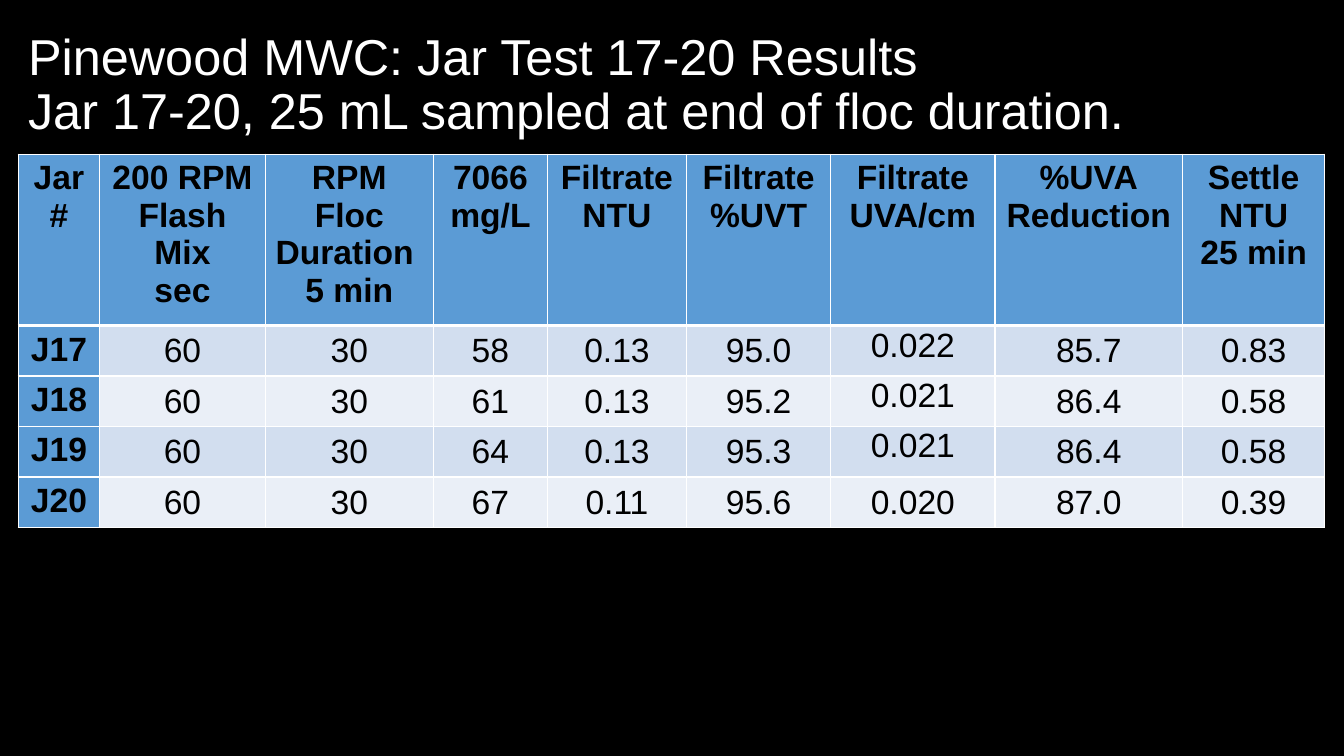
from lxml import etree
from pptx import Presentation
from pptx.dml.color import RGBColor
from pptx.enum.text import MSO_ANCHOR, PP_ALIGN
from pptx.oxml.ns import qn
from pptx.util import Inches, Pt

COLORS = {
    "background": "000000",
    "title": "FFFFFF",
    "text": "000000",
    "border": "FFFFFF",
    "header": "5B9BD5",
    "odd": "D2DEEF",
    "even": "EAEFF7",
}


def write(frame, text, size=24, color="text", bold=False, align=PP_ALIGN.CENTER, spacing=None):
    frame.text = text
    for paragraph in frame.paragraphs:
        paragraph.alignment = align
        paragraph.line_spacing = spacing
        for run in paragraph.runs:
            run.font.name = "Arial"
            run.font.size = Pt(size)
            run.font.bold = bold
            run.font.color.rgb = RGBColor.from_string(COLORS[color])


def add_borders(cell, widths):
    properties = cell._tc.get_or_add_tcPr()
    for position, (side, width) in enumerate(widths.items()):
        line = etree.Element(qn(f"a:{side}"), w=str(Pt(width)))
        fill = etree.SubElement(line, qn("a:solidFill"))
        etree.SubElement(fill, qn("a:srgbClr"), val=COLORS["border"])
        properties.insert(position, line)


presentation = Presentation()
presentation.slide_width = Inches(13.33)
presentation.slide_height = Inches(7.5)
slide = presentation.slides.add_slide(presentation.slide_layouts[6])
slide.background.fill.solid()
slide.background.fill.fore_color.rgb = RGBColor.from_string(COLORS["background"])

title = slide.shapes.add_textbox(Inches(0.18), Inches(0.13), Inches(12.24), Inches(1.45)).text_frame
title.word_wrap = True
title.vertical_anchor = MSO_ANCHOR.MIDDLE
write(
    title,
    "Pinewood MWC: Jar Test 17-20 Results\vJar 17-20, 25 mL sampled at end of floc duration.",
    size=36, color="title", align=PP_ALIGN.LEFT, spacing=0.9,
)

results = [
    ["Jar\n#", "200 RPM\nFlash\nMix\nsec", "RPM\nFloc\nDuration \n5 min", "7066\nmg/L",
     "Filtrate\nNTU", "Filtrate\n%UVT", "Filtrate\nUVA/cm", "%UVA\nReduction",
     "Settle\nNTU\n25 min"],
    ["J17", "60", "30", "58", "0.13", "95.0", "0.022", "85.7", "0.83"],
    ["J18", "60", "30", "61", "0.13", "95.2", "0.021", "86.4", "0.58"],
    ["J19", "60", "30", "64", "0.13", "95.3", "0.021", "86.4", "0.58"],
    ["J20", "60", "30", "67", "0.11", "95.6", "0.020", "87.0", "0.39"],
]
column_widths = [0.81, 1.64, 1.67, 1.13, 1.38, 1.43, 1.63, 1.86, 1.41]
row_heights = [1.59] + [0.47] * 4
uva_column = 6

table = slide.shapes.add_table(
    len(results), len(column_widths),
    Inches(0.18), Inches(1.53), Inches(sum(column_widths)), Inches(sum(row_heights)),
).table
for column, width in zip(table.columns, column_widths):
    column.width = Inches(width)
for row, height in zip(table.rows, row_heights):
    row.height = Inches(height)

for row_index, values in enumerate(results):
    for column_index, value in enumerate(values):
        cell = table.cell(row_index, column_index)
        is_heading = row_index == 0 or column_index == 0
        write(cell.text_frame, value, bold=is_heading)
        if is_heading:
            shade = "header"
        else:
            shade = "odd" if row_index % 2 else "even"
            cell.margin_left = cell.margin_right = cell.margin_top = Inches(0.01)
            cell.margin_bottom = 0
            if column_index != uva_column or row_index == len(results) - 1:
                cell.vertical_anchor = MSO_ANCHOR.MIDDLE
        cell.fill.solid()
        cell.fill.fore_color.rgb = RGBColor.from_string(COLORS[shade])
        add_borders(cell, {
            "lnL": 1,
            "lnR": 1,
            "lnT": 3 if row_index == 1 else 1,
            "lnB": 3 if row_index == 0 else 1,
        })

presentation.save("out.pptx")
